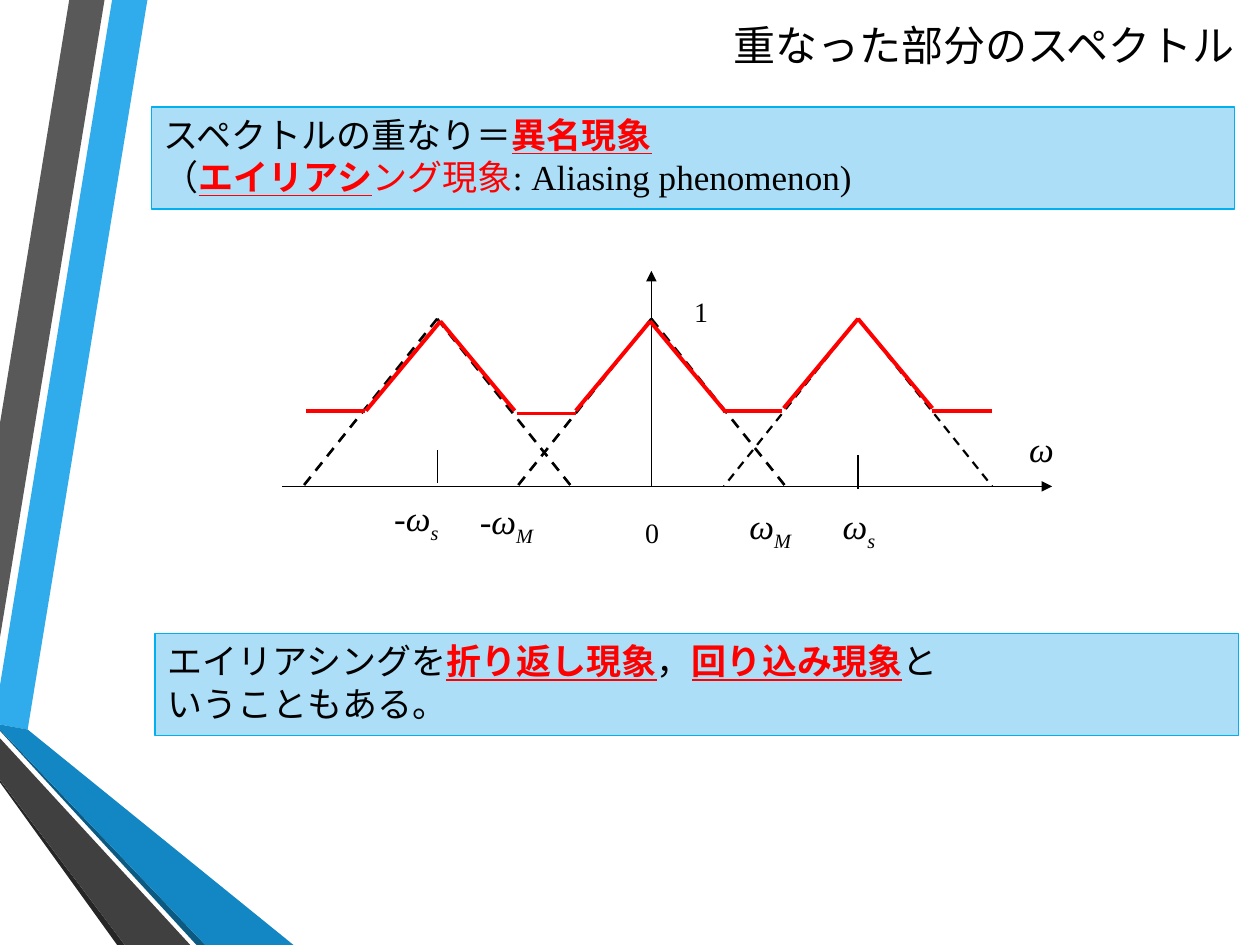
from dataclasses import dataclass
from lxml import etree
from pptx import Presentation
from pptx.dml.color import RGBColor as Color
from pptx.enum.dml import MSO_LINE as Dash
from pptx.enum.shapes import MSO_CONNECTOR as Connector, MSO_SHAPE as Preset
from pptx.enum.text import MSO_ANCHOR as Anchor, PP_ALIGN as Align
from pptx.oxml.ns import qn
from pptx.util import Inches, Pt


@dataclass(frozen=True)
class Theme:
    black: str = "000000"
    red: str = "FF0000"
    box_fill: str = "ACDEF7"
    box_line: str = "00B0F0"
    title_font: str = "Calibri"
    text_font: str = "Times New Roman"
    title_size: int = 24
    text_size: int = 20
    number_size: int = 16


theme = Theme()
presentation = Presentation()
presentation.slide_width, presentation.slide_height = Inches(10), Inches(7.5)
column = presentation.slide_width // 1000
row = presentation.slide_height // 750
slide = presentation.slides.add_slide(presentation.slide_layouts[5])
shapes = slide.shapes


def write(frame, lines, size=theme.text_size, font=theme.text_font,
          align=Align.LEFT, spacing=24, gap=0):
    frame.word_wrap = True
    for index, runs in enumerate(lines):
        paragraph = frame.add_paragraph() if index else frame.paragraphs[0]
        paragraph.alignment = align
        paragraph.font.size, paragraph.font.name = Pt(size), font
        if spacing:
            paragraph.line_spacing = Pt(spacing)
        paragraph.space_before = paragraph.space_after = Pt(gap)
        for text, style in runs:
            run = paragraph.add_run()
            run.text = text
            color = theme.red if "red" in style else theme.black
            run.font.color.rgb = Color.from_string(color)
            if "strong" in style:
                run.font.bold = run.font.underline = True
            if "italic" in style:
                run.font.italic = True
            if "sub" in style:
                run.font._element.set("baseline", "-25000")


def add_line(start, end, color=theme.black, width=0.75, dashed=False, arrow=False):
    line = shapes.add_connector(Connector.STRAIGHT, start[0] * column, start[1] * row,
                                end[0] * column, end[1] * row)
    line.line.color.rgb = Color.from_string(color)
    line.line.width = Pt(width)
    if dashed:
        line.line.dash_style = Dash.DASH
    if arrow:
        etree.SubElement(line.line._get_or_add_ln(), qn("a:tailEnd"), type="triangle")
    etree.SubElement(line._element.spPr, qn("a:effectLst"))


ribbons = [
    ("30ACEC", [(0, 544), (0, 575), (22, 579), (117, 0), (89, 0)]),
    ("595959", [(83, 0), (55, 0), (0, 336), (0, 506)]),
    ("262626", [(0, 619), (0, 621), (93, 750), (99, 750)]),
    ("0C5A82", [(0, 579), (0, 580), (156, 750), (163, 750)]),
    ("1287C3", [(0, 579), (163, 750), (233, 750), (22, 579), (0, 575)]),
    ("404040", [(0, 619), (99, 750), (151, 750), (0, 586)]),
]
for color, points in ribbons:
    builder = shapes.build_freeform(*points[0], scale=(column, row))
    builder.add_line_segments(points[1:], close=True)
    ribbon = builder.convert_to_shape()
    ribbon.shadow.inherit = False
    ribbon.fill.solid()
    ribbon.fill.fore_color.rgb = Color.from_string(color)
    ribbon.line.fill.background()

title = shapes.title
title.left, title.top = 147 * column, 2 * row
title.width, title.height = 843 * column, 67 * row
title.text_frame.vertical_anchor = Anchor.MIDDLE
write(title.text_frame, [[("重なった部分のスペクトル", "")]],
      theme.title_size, theme.title_font, Align.RIGHT, None)

boxes = [
    (120, 85, [
        [("スペクトルの重なり＝", ""), ("異名現象", "red strong")],
        [("（", ""), ("エイリアシ", "red strong"), ("ング現象", "red"),
         (": Aliasing phenomenon)", "")],
    ]),
    (123, 503, [
        [("エイリアシングを", ""), ("折り返し現象", "red strong"), ("，", ""),
         ("回り込み現象", "red strong"), ("と", "")],
        [("いうこともある。", "")],
    ]),
]
for left, top, lines in boxes:
    box = shapes.add_shape(Preset.RECTANGLE, left * column, top * row, 860 * column, 81 * row)
    box.shadow.inherit = False
    box.fill.solid()
    box.fill.fore_color.rgb = Color.from_string(theme.box_fill)
    box.line.color.rgb = Color.from_string(theme.box_line)
    box.line.width = Pt(0.75)
    box.text_frame.vertical_anchor = Anchor.TOP
    write(box.text_frame, lines)

baseline, peak = 386, 253
add_line((224, baseline), (835, baseline), arrow=True)
add_line((517, baseline), (517, 215), arrow=True)
add_line((347, 383), (347, 357))
add_line((681, 388), (681, 361))

for center, width in [(347, 1.5), (517, 1.5), (681, 1.25)]:
    for side in (-1, 1):
        add_line((center, peak), (center + side * 106.5, baseline), width=width, dashed=True)

for center, top in [(349.5, 255), (516, 255), (681, peak)]:
    for side in (-1, 1):
        add_line((center, top), (center + side * 59, top + 71), theme.red, 2.25)

for left, level in [(243, 326), (410, 328), (574, 326), (740, 326)]:
    add_line((left, level), (left + 47, level), theme.red, 2)

symbols = [
    (303, 394, 109, 68, [("-ω", "italic"), ("s", "italic sub")]),
    (371, 396, 83, 65, [("-", ""), ("ω", "italic"), ("M", "italic sub")]),
    (585, 400, 147, 67, [("ω", "italic"), ("M", "italic sub")]),
    (659, 400, 74, 61, [("ω", "italic"), ("s", "italic sub")]),
    (807, 334, 68, 60, [("ω", "italic")]),
]
for left, top, width, height, runs in symbols:
    label = shapes.add_textbox(left * column, top * row, width * column, height * row)
    write(label.text_frame, [runs])

for left, top, number in [(480, 417, "0"), (519, 242, "1")]:
    label = shapes.add_textbox(left * column, top * row, 75 * column, 54 * row)
    write(label.text_frame, [[(number, "")]], theme.number_size,
          align=Align.CENTER, spacing=10, gap=6)

presentation.save("out.pptx")
